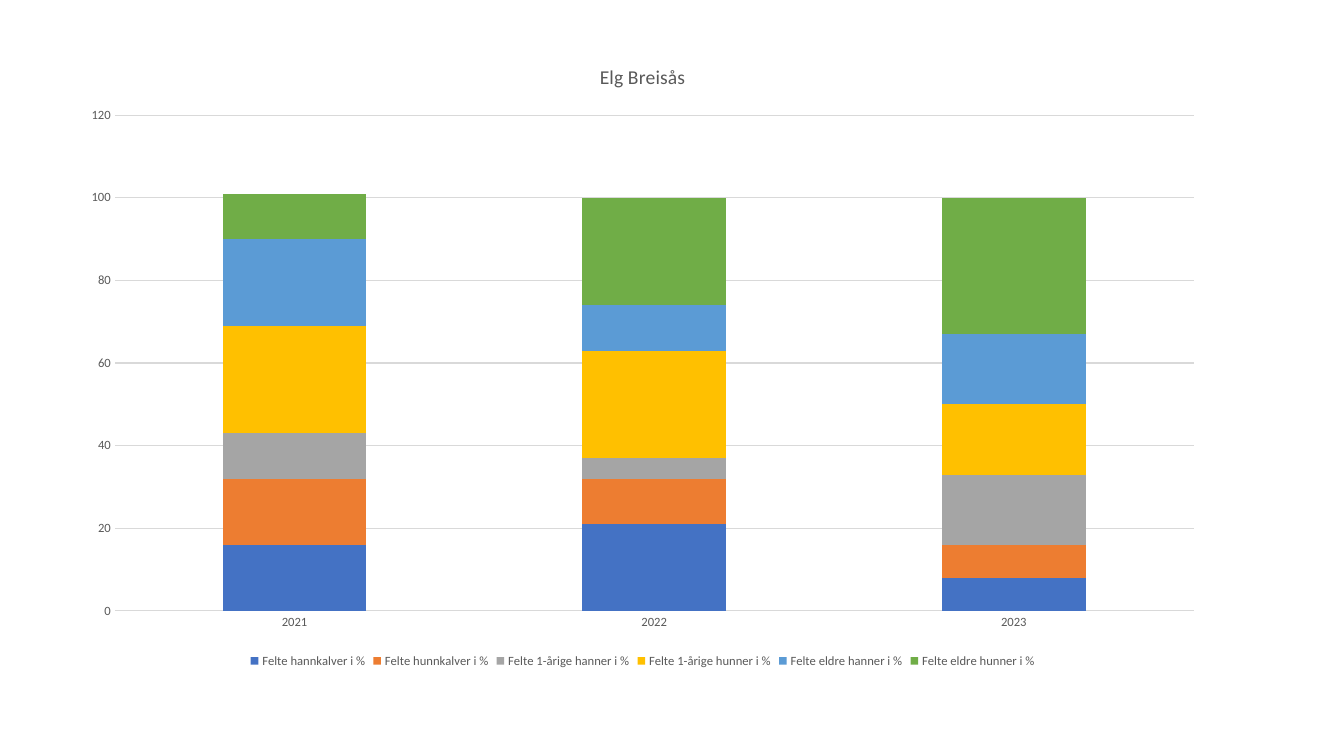
from pptx import Presentation
from pptx.chart.data import CategoryChartData
from pptx.dml.color import RGBColor
from pptx.enum.chart import XL_CHART_TYPE, XL_LEGEND_POSITION, XL_TICK_MARK
from pptx.util import Cm, Pt

STACKED = XL_CHART_TYPE.COLUMN_STACKED
BOTTOM = XL_LEGEND_POSITION.BOTTOM
NO_TICK = XL_TICK_MARK.NONE
BLANK_LAYOUT = 6

COLORS = {
    "text": "595959",
    "grid": "D9D9D9",
    "blue": "4472C4",
    "orange": "ED7D31",
    "gray": "A5A5A5",
    "yellow": "FFC000",
    "light_blue": "5B9BD5",
    "green": "70AD47",
}

YEARS = ["2021", "2022", "2023"]
SERIES = [
    ("Felte hannkalver i %", (16, 21, 8), "blue"),
    ("Felte hunnkalver i %", (16, 11, 8), "orange"),
    ("Felte 1-årige hanner i %", (11, 5, 17), "gray"),
    ("Felte 1-årige hunner i %", (26, 26, 17), "yellow"),
    ("Felte eldre hanner i %", (21, 11, 17), "light_blue"),
    ("Felte eldre hunner i %", (11, 26, 33), "green"),
]


class SlideBuilder:
    def __init__(self, slide, font="Calibri"):
        self.s = slide
        self.font = font

    def color(self, name):
        return RGBColor.from_string(COLORS[name])

    def style_font(self, font, size):
        font.name = self.font
        font.size = Pt(size)
        font.bold = False
        font.color.rgb = self.color("text")

    def style_line(self, line):
        line.color.rgb = self.color("grid")
        line.width = Pt(0.75)

    def stacked_chart(self, title, categories, series, left, top, width, height):
        data = CategoryChartData()
        data.categories = categories
        for name, values, _ in series:
            data.add_series(name, values)
        chart = self.s.shapes.add_chart(
            STACKED, Cm(left), Cm(top), Cm(width), Cm(height), data
        ).chart
        self.style_font(chart.font, 10)

        plot = chart.plots[0]
        plot.gap_width = 150
        plot.overlap = 100
        plot.vary_by_categories = False
        for bars, (_, _, color) in zip(plot.series, series):
            bars.format.fill.solid()
            bars.format.fill.fore_color.rgb = self.color(color)

        self.chart_title(chart, title)
        self.axes(chart)
        self.legend(chart)

    def chart_title(self, chart, text):
        chart.has_title = True
        chart.chart_title.include_in_layout = False
        p = chart.chart_title.text_frame.paragraphs[0]
        r = p.add_run()
        r.text = text
        self.style_font(r.font, 14)

    def axes(self, chart):
        for axis in (chart.category_axis, chart.value_axis):
            axis.major_tick_mark = NO_TICK
            axis.minor_tick_mark = NO_TICK
            self.style_font(axis.tick_labels.font, 9)
        self.style_line(chart.category_axis.format.line)

        values = chart.value_axis
        values.minimum_scale, values.maximum_scale = 0, 120
        values.major_unit = 20
        values.format.line.fill.background()
        values.has_major_gridlines = True
        self.style_line(values.major_gridlines.format.line)

    def legend(self, chart):
        chart.has_legend = True
        chart.legend.position = BOTTOM
        chart.legend.include_in_layout = False
        self.style_font(chart.legend.font, 9)


def main():
    prs = Presentation()
    prs.slide_width, prs.slide_height = Cm(33.87), Cm(19.05)
    s = prs.slides.add_slide(prs.slide_layouts[BLANK_LAYOUT])
    builder = SlideBuilder(s)
    builder.stacked_chart("Elg Breisås", YEARS, SERIES, 1.73, 1.04, 28.93, 15.9)
    prs.save("out.pptx")


if __name__ == "__main__":
    main()
